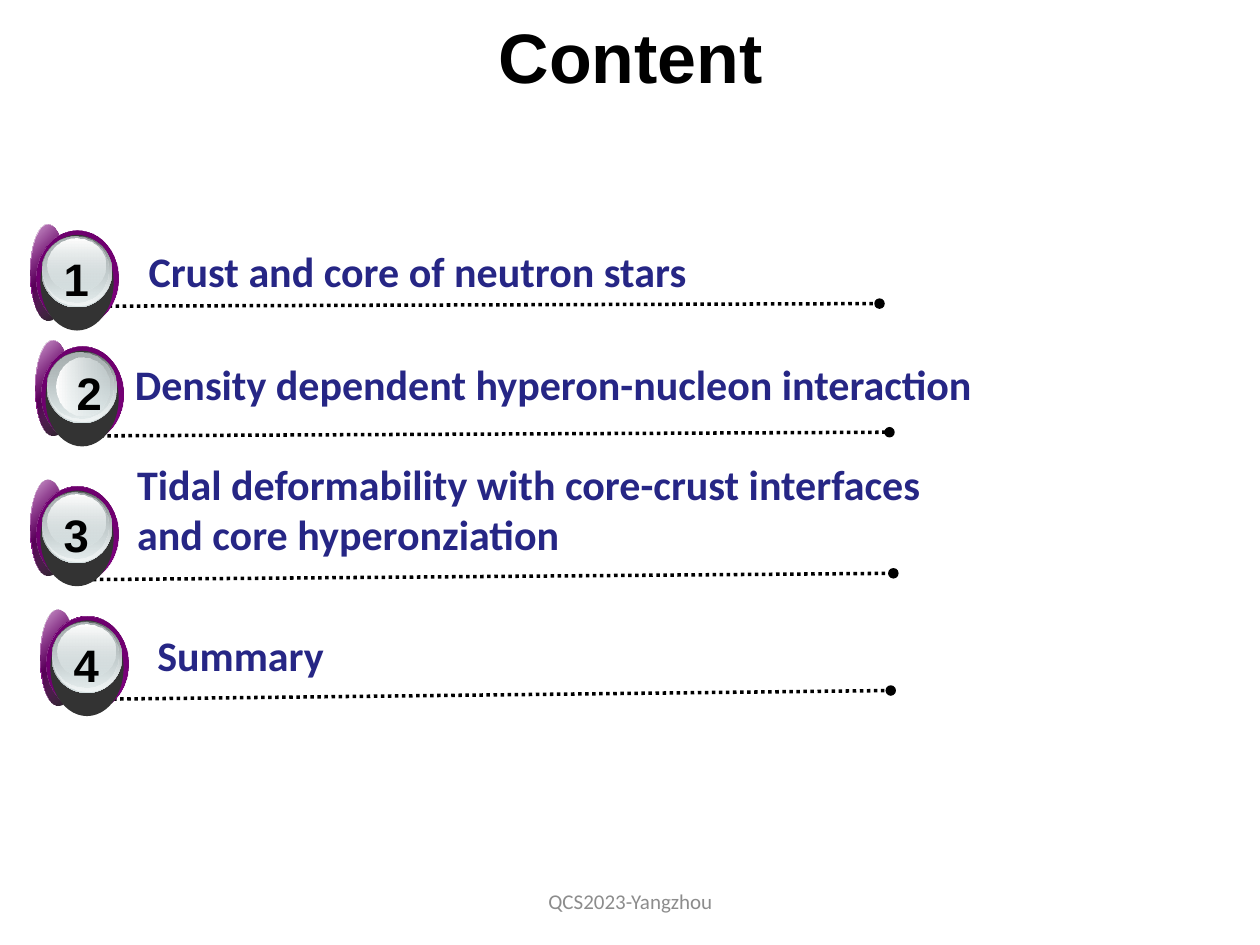
from typing import NamedTuple

from lxml.etree import SubElement
from pptx import Presentation
from pptx.dml.color import RGBColor
from pptx.enum.dml import MSO_LINE_DASH_STYLE as Dash
from pptx.enum.shapes import MSO_CONNECTOR as Connector, MSO_SHAPE as Shape
from pptx.enum.text import MSO_ANCHOR as Anchor, PP_ALIGN as Align
from pptx.oxml.ns import qn
from pptx.util import Pt

COLORS = {
    "black": "000000", "white": "FFFFFF", "topic": "262685", "footer": "8C8C8C",
    "purple": "800080", "rim": "620062", "plum": "690069", "shade": "333333",
    "slate": "636869", "silver": "D6E1E2", "steel": "AAB2B3", "pale": "F1F5F5",
}


class Stop(NamedTuple):
    position: int
    color: str
    opacity: int = 100


class Layer(NamedTuple):
    """One ellipse of a badge, placed relative to the badge's corner."""
    left: float
    top: float
    width: float
    height: float
    angle: int
    stops: tuple[Stop, ...]


class Style(NamedTuple):
    size: float
    font: str
    color: str
    bold: bool = True


class Topic(NamedTuple):
    number: str
    lines: tuple[str, ...]
    badge: tuple[float, float]
    text_box: tuple[float, float, float, float]
    rule: tuple[float, float, float, float]
    number_offset: tuple[float, float] = (12, 8.5)
    highlight_shift: tuple[float, float] = (0, 0)
    highlight_rotation: float = 0


LAYERS = (
    Layer(0, 0, 20, 54.7, 45,
          (Stop(0, "white"), Stop(50, "purple"), Stop(100, "white"))),
    Layer(0, 0, 20, 54.7, 45, (Stop(0, "purple", 32), Stop(100, "black", 90))),
    Layer(3.6, 3.6, 46.8, 54.7, 315,
          (Stop(0, "rim"), Stop(50, "purple"), Stop(100, "rim"))),
    Layer(3.6, 3.6, 46.8, 54.7, 45, (Stop(0, "plum"), Stop(100, "purple", 0))),
    Layer(5.8, 6, 41.8, 54.7, 0, (Stop(0, "shade"),)),
    Layer(6.5, 6.5, 40.3, 41, 90, (Stop(0, "slate"), Stop(100, "silver"))),
    Layer(7, 6.8, 39.6, 39.6, 90, (Stop(0, "silver", 0), Stop(100, "pale"))),
    Layer(7.2, 7.2, 37.4, 37.4, 90, (Stop(0, "steel"), Stop(100, "silver", 48))),
    Layer(10, 8.3, 33.1, 30.2, 90, (Stop(0, "white"), Stop(100, "silver", 38))),
)

TITLE = Style(40, "Arial", "black")
NUMBER = Style(26, "Arial", "black")
TOPIC = Style(24, "Calibri", "topic")
FOOTER = Style(12, "Calibri", "footer", False)

TOPICS = (
    Topic("1", ("Crust and core of neutron stars",), (17.3, 128.2),
          (77.8, 136.8, 373, 36), (46, 175, 502.6, 173.5)),
    Topic("2", ("Density dependent hyperon-nucleon interaction",), (20.2, 194.4),
          (70, 201.6, 583, 36), (53.3, 249.1, 508.3, 247),
          number_offset=(16.5, 7), highlight_shift=(0.8, 3),
          highlight_rotation=270),
    Topic("3", ("Tidal deformability with core-crust interfaces",
                "and core hyperonziation"), (17.3, 274.3),
          (71.3, 258.5, 476, 65.5), (49, 331.2, 510.5, 327.6)),
    Topic("4", ("Summary",), (23, 348.5),
          (82.8, 356.4, 373, 36), (52.6, 399.6, 509, 394.6)),
)


def rgb(name: str) -> RGBColor:
    return RGBColor.from_string(COLORS[name])


def fill_gradient(shape, layer: Layer) -> None:
    """Fill with stops that may be translucent."""
    gradient = SubElement(shape._element.spPr, qn("a:gradFill"), rotWithShape="1")
    shape._element.spPr.find(qn("a:prstGeom")).addnext(gradient)
    stop_list = SubElement(gradient, qn("a:gsLst"))
    for stop in layer.stops:
        node = SubElement(stop_list, qn("a:gs"), pos=str(stop.position * 1000))
        color = SubElement(node, qn("a:srgbClr"), val=COLORS[stop.color])
        if stop.opacity < 100:
            SubElement(color, qn("a:alpha"), val=str(stop.opacity * 1000))
    SubElement(gradient, qn("a:lin"), ang=str(layer.angle * 60000), scaled="1")


def add_badge(page, topic: Topic) -> None:
    group = page.shapes.add_group_shape()
    for layer in LAYERS:
        left, top = topic.badge[0] + layer.left, topic.badge[1] + layer.top
        is_highlight = layer is LAYERS[-1]
        if is_highlight:
            left += topic.highlight_shift[0]
            top += topic.highlight_shift[1]
        ellipse = group.shapes.add_shape(
            Shape.OVAL, Pt(left), Pt(top), Pt(layer.width), Pt(layer.height))
        ellipse.shadow.inherit = False
        ellipse.line.fill.background()
        if is_highlight:
            ellipse.rotation = topic.highlight_rotation
        if len(layer.stops) == 1:
            ellipse.fill.solid()
            ellipse.fill.fore_color.rgb = rgb(layer.stops[0].color)
        else:
            fill_gradient(ellipse, layer)


def add_rule(page, ends: tuple[float, float, float, float]) -> None:
    """Draw a dotted line that ends in a dot."""
    rule = page.shapes.add_connector(Connector.STRAIGHT, *map(Pt, ends))
    rule.line.color.rgb = rgb("black")
    rule.line.width = Pt(2)
    rule.line.dash_style = Dash.ROUND_DOT
    SubElement(rule.line._get_or_add_ln(), qn("a:tailEnd"), type="oval")
    SubElement(rule._element.spPr, qn("a:effectLst"))


def add_text(page, place: tuple[float, float, float, float], lines: tuple[str, ...],
             style: Style, align: Align = Align.LEFT, anchor: Anchor = Anchor.TOP,
             inset_top: float = 3.6) -> None:
    box = page.shapes.add_textbox(*map(Pt, place))
    frame = box.text_frame
    frame.word_wrap = True
    frame.vertical_anchor = anchor
    frame.margin_top = Pt(inset_top)
    frame.text = "\n".join(lines)
    for para in frame.paragraphs:
        para.alignment = align
        for span in para.runs:
            span.font.size = Pt(style.size)
            span.font.name = style.font
            span.font.bold = style.bold
            span.font.color.rgb = rgb(style.color)


def main() -> None:
    deck = Presentation()
    deck.slide_width, deck.slide_height = Pt(720), Pt(540)
    page = deck.slides.add_slide(deck.slide_layouts[6])

    add_text(page, (20.2, 0, 680.4, 49), ("Content",), TITLE, Align.CENTER,
             inset_top=8)
    for topic in TOPICS:
        add_rule(page, topic.rule)
    for topic in TOPICS:
        add_badge(page, topic)
        number_left = topic.badge[0] + topic.number_offset[0]
        number_top = topic.badge[1] + topic.number_offset[1]
        add_text(page, (number_left, number_top, 30.2, 38.9), (topic.number,),
                 NUMBER, inset_top=7)
        add_text(page, topic.text_box, topic.lines, TOPIC, Align.JUSTIFY)
    add_text(page, (246.2, 500.4, 228.2, 28.8), ("QCS2023-Yangzhou",), FOOTER,
             Align.CENTER, Anchor.MIDDLE)

    deck.save("out.pptx")


if __name__ == "__main__":
    main()
